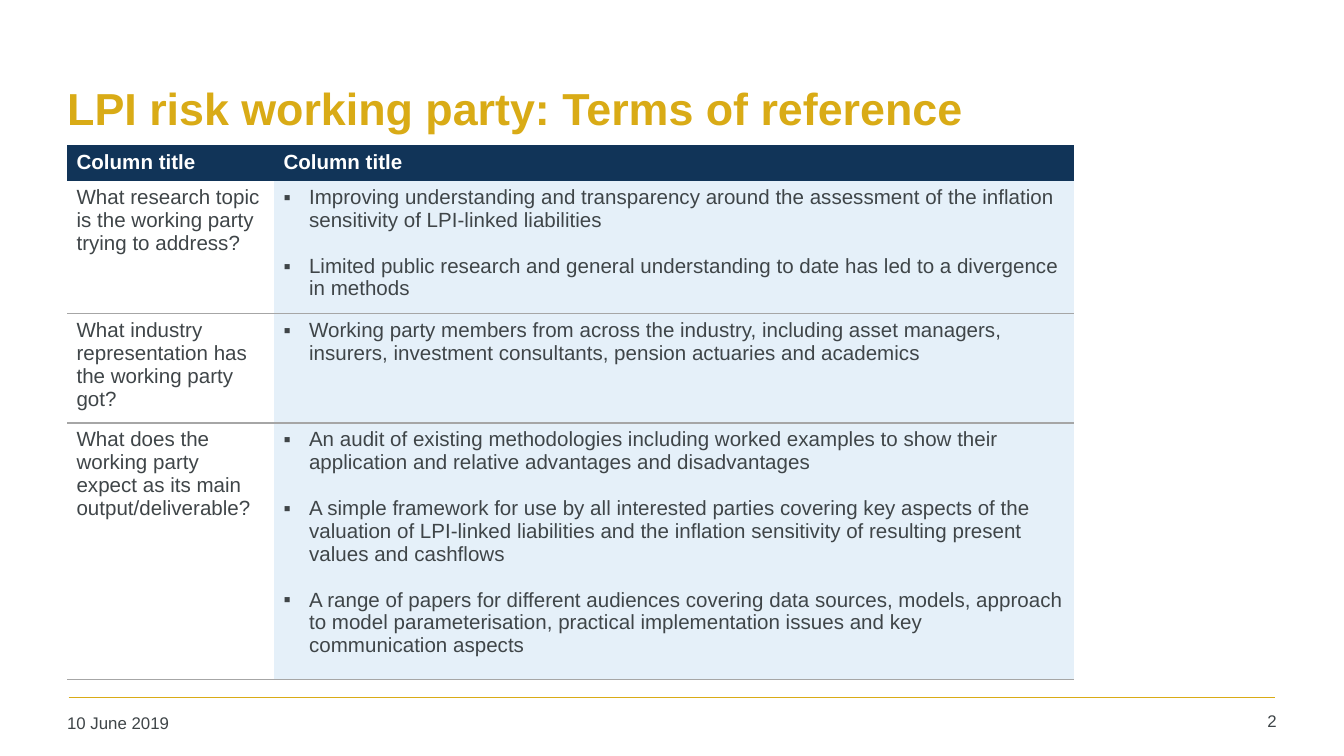
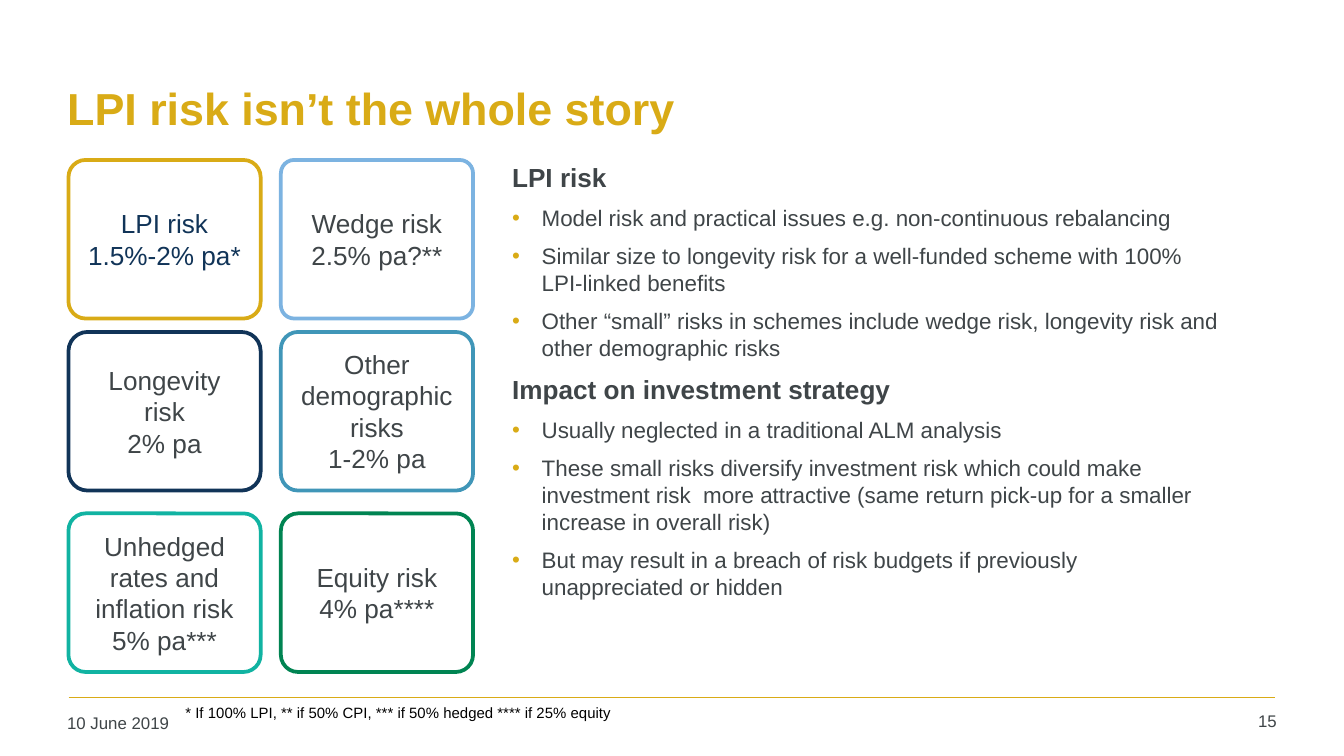
from dataclasses import dataclass, field
from typing import Any, NamedTuple, Optional

from lxml import etree
from pptx import Presentation
from pptx import util as u
from pptx.dml.color import RGBColor
from pptx.enum import shapes, text
from pptx.oxml.ns import qn


# Theme: colours and type sizes
@dataclass(frozen=True)
class Theme:
    font: str = "Arial"
    gold: str = "D9AB16"
    navy: str = "113458"
    ink: str = "3F4548"
    black: str = "000000"
    white: str = "FFFFFF"
    pale: str = "E5F0F9"
    grey: str = "A6A6A6"
    sky: str = "7CB3E1"
    blue: str = "4096B8"
    teal: str = "11B3A2"
    green: str = "008452"
    title: float = 24
    head: float = 14
    body: float = 12
    cell: float = 11
    foot: float = 9
    note: float = 8


T = Theme()
PLAIN = "{2D5ABB26-0587-4C30-8999-92F81FD0307C}"  # table style without grid
WIDE = 10
DATE = "10 June 2019"
TIGHT = (0.07, 0.04, 0.07, 0.04)


class Area(NamedTuple):
    left: float
    top: float
    width: float
    height: float

    def place(self) -> list[u.Length]:
        return [u.Inches(v) for v in self]


@dataclass
class Bullet:
    char: str
    indent: float
    color: Optional[str] = None


@dataclass
class Para:
    words: str
    size: float
    color: str = T.ink
    bold: bool = False
    bullet: Optional[Bullet] = None
    form: dict[str, Any] = field(default_factory=dict)


class Risk(NamedTuple):
    name: str
    size: str
    edge: str
    round: float = 0.108
    ink: str = T.ink


# Shared helpers
def rgb(code: str) -> RGBColor:
    return RGBColor.from_string(code)


def apply(target: Any, form: dict[str, Any]) -> None:
    for key, value in form.items():
        setattr(target, key, value)


def inset(target: Any, sides: tuple[float, ...]) -> None:
    names = ("margin_left", "margin_top", "margin_right", "margin_bottom")
    apply(target, {k: u.Inches(v) for k, v in zip(names, sides)})


def mark(para: Any, bullet: Optional[Bullet]) -> None:
    props = para._p.get_or_add_pPr()
    dent = u.Inches(bullet.indent) if bullet else 0
    props.set("marL", str(dent))
    props.set("indent", str(-dent))
    if not bullet:
        etree.SubElement(props, qn("a:buNone"))
        return
    if bullet.color:
        tint = etree.SubElement(props, qn("a:buClr"))
        etree.SubElement(tint, qn("a:srgbClr"), val=bullet.color)
    etree.SubElement(props, qn("a:buFont"), typeface=T.font)
    etree.SubElement(props, qn("a:buChar"), char=bullet.char)


def write(frame: Any, paras: list[Para], form: Optional[dict[str, Any]] = None,
          sides: Optional[tuple[float, ...]] = None) -> None:
    apply(frame, {"word_wrap": True, **(form or {})})
    if sides:
        inset(frame, sides)
    for i, item in enumerate(paras):
        para = frame.paragraphs[0] if i == 0 else frame.add_paragraph()
        mark(para, item.bullet)
        apply(para, {"space_before": u.Pt(0), **item.form})
        run = para.add_run()
        run.text = item.words
        apply(run.font, {"name": T.font, "size": u.Pt(item.size), "bold": item.bold})
        run.font.color.rgb = rgb(item.color)


def put(shape: Any, area: Area) -> None:
    apply(shape, dict(zip(("left", "top", "width", "height"), area.place())))


def label(slide: Any, area: Area, para: Para, form: Optional[dict[str, Any]] = None,
          sides: tuple[float, ...] = TIGHT) -> None:
    write(slide.shapes.add_textbox(*area.place()).text_frame, [para], form, sides)


def start(deck: Any, layout: int, title: str, page: str) -> Any:
    """Add a slide with its title, gold rule and footer."""
    slide = deck.slides.add_slide(deck.slide_layouts[layout])
    put(slide.shapes.title, Area(0.43, 0.33, 9.07, 0.94))
    write(slide.shapes.title.text_frame,
          [Para(title, T.title, T.gold, True, form={"alignment": text.PP_ALIGN.LEFT})],
          {"vertical_anchor": text.MSO_ANCHOR.MIDDLE,
           "auto_size": text.MSO_AUTO_SIZE.NONE}, TIGHT)
    rule = slide.shapes.add_connector(
        shapes.MSO_CONNECTOR.STRAIGHT, *[u.Inches(v) for v in (0.51, 5.19, 9.49, 5.19)])
    rule.line.color.rgb = rgb(T.gold)
    rule.line.width = u.Pt(1)
    etree.SubElement(rule._element.spPr, qn("a:effectLst"))
    label(slide, Area(0.43, 5.26, 2.2, 0.27), Para(DATE, T.foot))
    label(slide, Area(8.86, 5.25, 0.71, 0.28),
          Para(page, T.foot, form={"alignment": text.PP_ALIGN.RIGHT}))
    return slide


# Terms of reference
HEADS = ("Column title", "Column title")
TERMS = [
    ("What research topic is the working party trying to address?", [
        "Improving understanding and transparency around the assessment of the "
        "inflation sensitivity of LPI-linked liabilities",
        "Limited public research and general understanding to date has led to a "
        "divergence in methods"]),
    ("What industry representation has the working party got?", [
        "Working party members from across the industry, including asset managers, "
        "insurers, investment consultants, pension actuaries and academics"]),
    ("What does the working party expect as its main output/deliverable?", [
        "An audit of existing methodologies including worked examples to show their "
        "application and relative advantages and disadvantages",
        "A simple framework for use by all interested parties covering key aspects of "
        "the valuation of LPI-linked liabilities and the inflation sensitivity of "
        "resulting present values and cashflows",
        "A range of papers for different audiences covering data sources, models, "
        "approach to model parameterisation, practical implementation issues and key "
        "communication aspects"]),
]


def edge(cell: Any) -> None:
    line = etree.SubElement(cell._tc.get_or_add_tcPr(), qn("a:lnB"), w=str(u.Pt(1)))
    fill = etree.SubElement(line, qn("a:solidFill"))
    etree.SubElement(fill, qn("a:srgbClr"), val=T.grey)


def fill_cell(cell: Any, paras: list[Para], color: str, lined: bool) -> None:
    inset(cell, TIGHT)
    if lined:
        edge(cell)
    cell.fill.solid()
    cell.fill.fore_color.rgb = rgb(color)
    write(cell.text_frame, paras)


def terms(deck: Any) -> None:
    slide = start(deck, 5, "LPI risk working party: Terms of reference", "2")
    grid = slide.shapes.add_table(
        len(TERMS) + 1, 2, *Area(0.5, 1.08, 7.49, 3.97).place()).table
    grid.horz_banding = False
    grid._tbl.tblPr.find(qn("a:tableStyleId")).text = PLAIN
    for col, width in zip(grid.columns, (1.54, 5.95)):
        col.width = u.Inches(width)
    for row, height in zip(grid.rows, (0.26, 0.99, 0.81, 1.91)):
        row.height = u.Inches(height)
    for c, head in enumerate(HEADS):
        fill_cell(grid.cell(0, c), [Para(head, T.cell, T.white, True)], T.navy, False)
    square = Bullet("▪", 0.19)
    for r, (ask, points) in enumerate(TERMS, 1):
        fill_cell(grid.cell(r, 0), [Para(ask, T.cell)], T.white, True)
        paras = [Para(point, T.cell, bullet=square,
                      form={"space_before": u.Pt(12.3 if i else 0)})
                 for i, point in enumerate(points)]
        fill_cell(grid.cell(r, 1), paras, T.pale, True)


# Risk boxes and their story
RISKS = [
    Risk("LPI risk", "1.5%-2% pa*", T.gold, ink=T.navy),
    Risk("Wedge risk", "2.5% pa?**", T.sky, 0.084),
    Risk("Longevity risk", "2% pa", T.navy, 0.12),
    Risk("Other demographic risks", "1-2% pa", T.blue),
    Risk("Unhedged rates and inflation risk", "5% pa***", T.teal),
    Risk("Equity risk", "4% pa****", T.green),
]
STORY = {
    "LPI risk": [
        "Model risk and practical issues e.g. non-continuous rebalancing",
        "Similar size to longevity risk for a well-funded scheme with 100% "
        "LPI-linked benefits",
        "Other “small” risks in schemes include wedge risk, longevity risk and "
        "other demographic risks"],
    "Impact on investment strategy": [
        "Usually neglected in a traditional ALM analysis",
        "These small risks diversify investment risk which could make investment "
        "risk  more attractive (same return pick-up for a smaller increase in "
        "overall risk)",
        "But may result in a breach of risk budgets if previously unappreciated "
        "or hidden"],
}


def box(slide: Any, risk: Risk, area: Area) -> None:
    shape = slide.shapes.add_shape(
        shapes.MSO_SHAPE.ROUNDED_RECTANGLE, *area.place())
    shape.shadow.inherit = False
    shape.adjustments[0] = risk.round
    shape.fill.solid()
    shape.fill.fore_color.rgb = rgb(T.white)
    shape.line.color.rgb = rgb(risk.edge)
    shape.line.width = u.Pt(2)
    write(shape.text_frame,
          [Para(words, T.head, risk.ink, form={"alignment": text.PP_ALIGN.CENTER})
           for words in (risk.name, risk.size)],
          {"vertical_anchor": text.MSO_ANCHOR.MIDDLE})


def story(deck: Any) -> None:
    slide = start(deck, 1, "LPI risk isn’t the whole story", "15")
    dot = Bullet("•", 0.22, T.gold)
    paras: list[Para] = []
    for head, points in STORY.items():
        paras.append(Para(head, T.head, bold=True))
        paras += [Para(point, T.body, bullet=dot) for point in points]
    for para in paras[1:]:
        para.form = {"space_before": u.Pt(0.5 * para.size)}
    body = slide.placeholders[1]
    put(body, Area(3.74, 1.16, 5.43, 3.94))
    write(body.text_frame, paras, {"auto_size": text.MSO_AUTO_SIZE.NONE}, TIGHT)
    label(slide, Area(1.38, 5.21, 5.83, 0.21),
          Para("* If 100% LPI, ** if 50% CPI, *** if 50% hedged **** if 25% equity",
               T.note, T.black, form={"line_spacing": u.Pt(8)}),
          {"auto_size": text.MSO_AUTO_SIZE.SHAPE_TO_FIT_TEXT}, (0, 0.05, 0.1, 0.05))
    lefts, tops = (0.51, 2.09), (1.19, 2.47, 3.82)
    for i, risk in enumerate(RISKS):
        row, col = divmod(i, len(lefts))
        box(slide, risk, Area(lefts[col], tops[row], 1.43, 1.18))


def main() -> None:
    deck = Presentation()
    apply(deck, {"slide_width": u.Inches(WIDE),
                 "slide_height": u.Inches(WIDE * 9 / 16)})
    terms(deck)
    story(deck)
    deck.save("out.pptx")


if __name__ == "__main__":
    main()
